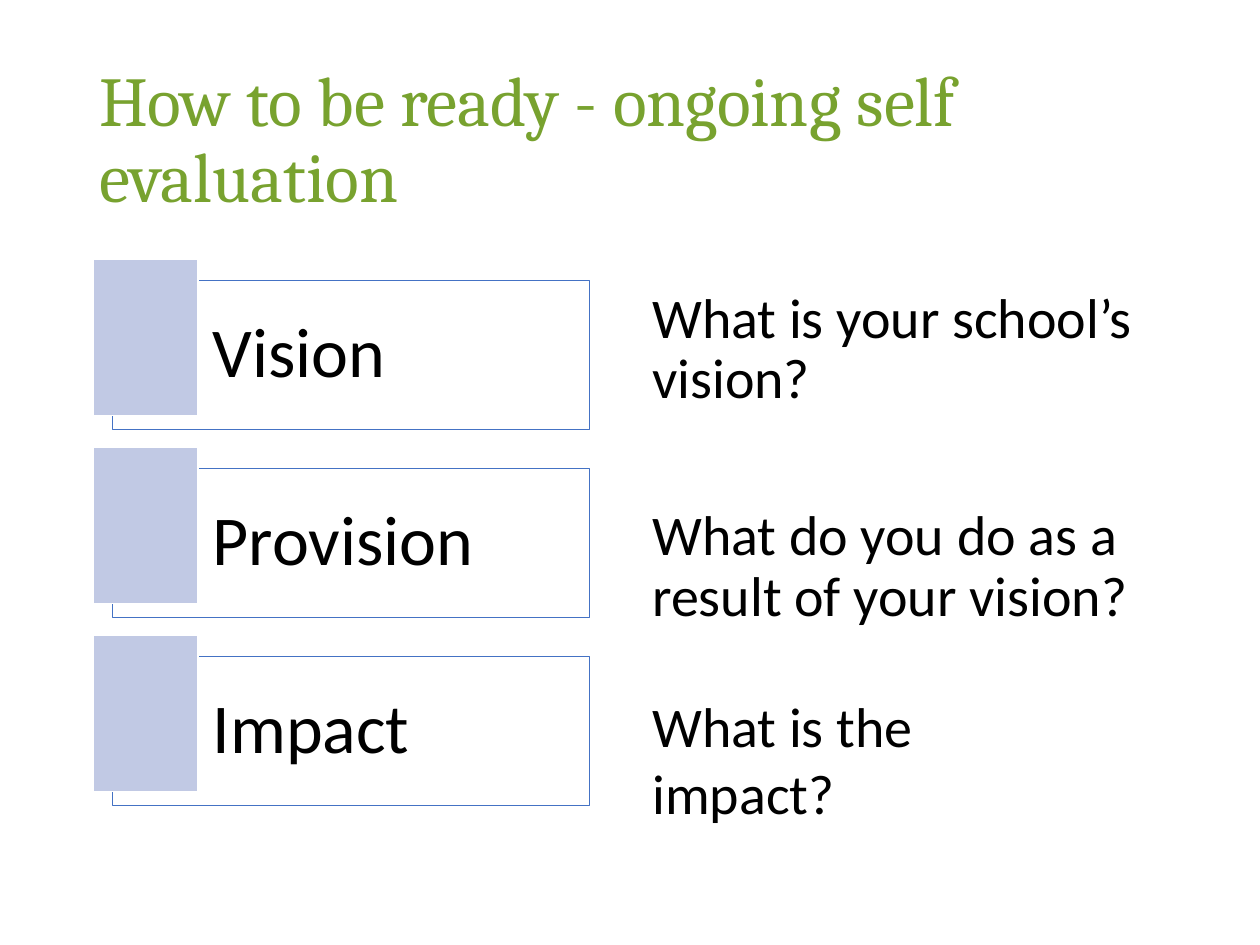
"""Build the self evaluation slide: three stages, each with its guiding question."""
from lxml import etree
from pptx import Presentation
from pptx import util as u
from pptx.dml.color import RGBColor
from pptx.enum import shapes, text
from pptx.oxml.ns import qn

TITLE = "How to be ready - ongoing self evaluation"
STAGES = ["Vision", "Provision", "Impact"]
QUESTIONS = ["What is your school’s vision?", "What do you do as a result of your vision?"]
LAST_QUESTION = "What is the impact?"

THEME = {
    "title": {"name": "Cambria", "size": u.Pt(40), "color": "78A22F"},
    "stage": {"name": "Calibri", "size": u.Pt(40), "color": "000000"},
    "question": {"name": "Calibri", "size": u.Pt(32), "color": "000000"},
    "card": {"fill": "FFFFFF", "line": "4472C4", "width": u.Pt(0.5)},
    "tab": {"fill": "C1C9E4", "line": "FFFFFF", "width": u.Pt(1)},
}
TITLE_BOX = (1.75, 1.02, 21.89, 3.68)
QUESTIONS_BOX = (12.9, 5.72, 11.23, 11.3)
LAST_QUESTION_BOX = (12.9, 13.82, 9.5, 3)
CARD_BOX = (2.26, 5.66, 9.63, 3)
TAB_BOX = (1.88, 5.23, 2.11, 3.15)
STAGE_PITCH = 3.79
CARD_OPACITY = 40
CARD_FRAME = {
    "margin_left": u.Cm(2.03), "margin_top": u.Cm(0.43),
    "margin_right": u.Cm(0.43), "margin_bottom": u.Cm(0.43),
}
MIDDLE = {"vertical_anchor": text.MSO_ANCHOR.MIDDLE}
TIGHT = {"line_spacing": 0.9, "alignment": text.PP_ALIGN.LEFT}


def apply(target, values):
    for name, value in values.items():
        setattr(target, name, value)


def place(box, row=0):
    left, top, width, height = box
    return [u.Cm(value) for value in (left, top + row * STAGE_PITCH, width, height)]


def write(paragraph, words, style, layout):
    apply(paragraph, layout)
    run = paragraph.add_run()
    run.text = words
    apply(run.font, {"name": style["name"], "size": style["size"]})
    run.font.color.rgb = RGBColor.from_string(style["color"])


def add_text(slide, box, lines, style, layouts, frame_format):
    frame = slide.shapes.add_textbox(*place(box)).text_frame
    apply(frame, {"word_wrap": True, **frame_format})
    for index, (words, layout) in enumerate(zip(lines, layouts)):
        paragraph = frame.add_paragraph() if index else frame.paragraphs[0]
        write(paragraph, words, style, layout)


def add_rectangle(slide, box, row, style):
    shape = slide.shapes.add_shape(shapes.MSO_SHAPE.RECTANGLE, *place(box, row))
    shape.shadow.inherit = False
    shape.fill.solid()
    shape.fill.fore_color.rgb = RGBColor.from_string(style["fill"])
    shape.line.color.rgb = RGBColor.from_string(style["line"])
    shape.line.width = style["width"]
    return shape


def add_stage(slide, row, name):
    card = add_rectangle(slide, CARD_BOX, row, THEME["card"])
    color = card.fill._xPr.find(qn("a:solidFill"))[0]
    etree.SubElement(color, qn("a:alpha"), val=str(CARD_OPACITY * 1000))
    apply(card.text_frame, {"word_wrap": True, **MIDDLE, **CARD_FRAME})
    write(card.text_frame.paragraphs[0], name, THEME["stage"], TIGHT)
    add_rectangle(slide, TAB_BOX, row, THEME["tab"])


def main():
    presentation = Presentation()
    apply(presentation, {"slide_width": u.Cm(25.4), "slide_height": u.Cm(19.05)})
    slide = presentation.slides.add_slide(presentation.slide_layouts[6])
    add_text(slide, TITLE_BOX, [TITLE], THEME["title"], [TIGHT], MIDDLE)
    spaced = [{**TIGHT, "space_before": u.Pt(gap)} for gap in (10, 55)]
    add_text(slide, QUESTIONS_BOX, QUESTIONS, THEME["question"], spaced, {})
    for row, name in enumerate(STAGES):
        add_stage(slide, row, name)
    add_text(slide, LAST_QUESTION_BOX, [LAST_QUESTION], THEME["question"], [{}], {})
    presentation.save("out.pptx")


if __name__ == "__main__":
    main()
